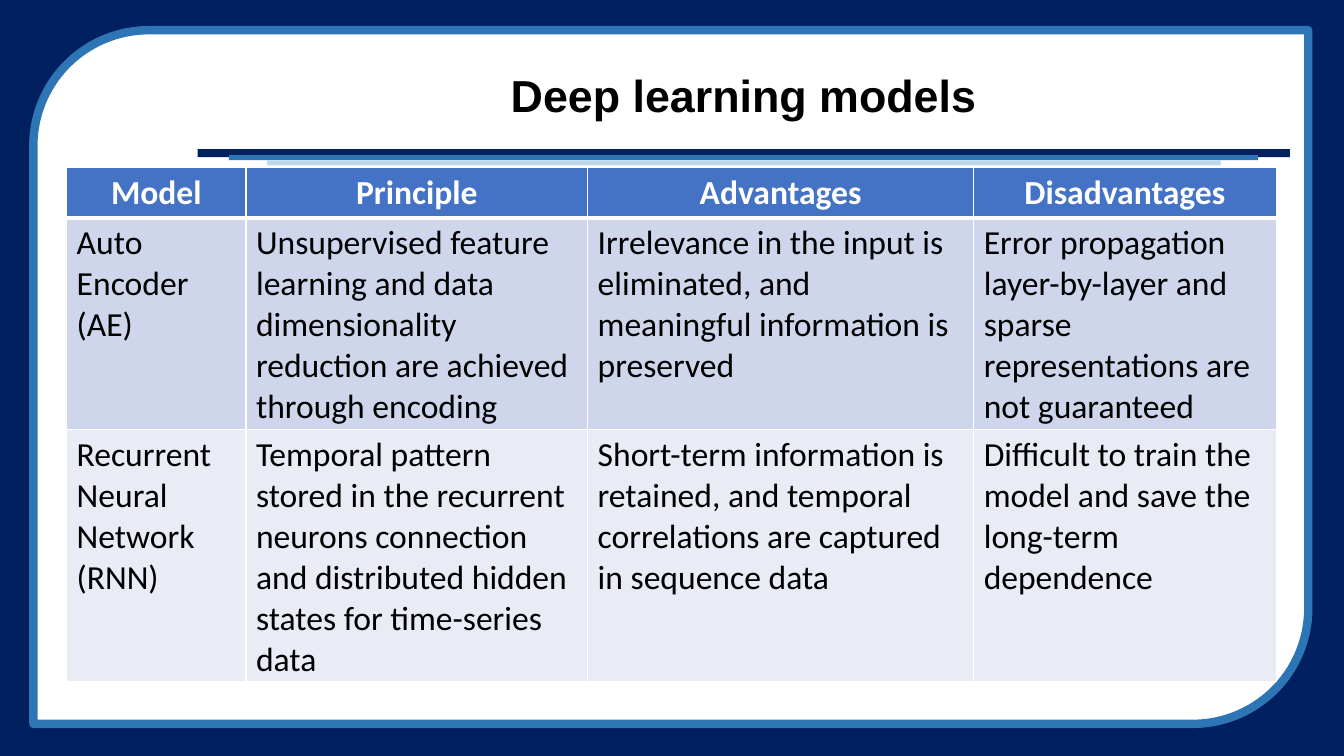
from lxml import etree
from pptx import Presentation
from pptx import util as u
from pptx.dml.color import RGBColor
from pptx.enum import shapes, text
from pptx.oxml.ns import qn

HUES = {
    "navy": "002060", "blue": "2E75B6", "pale": "BDD7EE",
    "head": "4472C4", "odd": "CFD5EA", "even": "E9EBF5",
    "white": "FFFFFF", "black": "000000",
}
BARS = [
    (4.98, 3.76, 27.53, 0.2, "navy"),
    (5.77, 3.91, 25.93, 0.13, "blue"),
    (6.73, 4.04, 24.03, 0.13, "pale"),
]
COLS = [4.52, 8.61, 9.73, 7.62]
ROWS = [1.22, 5.13, 6.1]
FILLS = ["head", "odd", "even"]
MODELS = [
    ["Model", "Principle", "Advantages", "Disadvantages"],
    ["Auto Encoder (AE)",
     "Unsupervised feature learning and data dimensionality reduction "
     "are achieved through encoding",
     "Irrelevance in the input is eliminated, and meaningful information "
     "is preserved",
     "Error propagation layer-by-layer and sparse representations are "
     "not guaranteed"],
    ["Recurrent Neural Network (RNN)",
     "Temporal pattern stored in the recurrent neurons connection and "
     "distributed hidden states for time-series data",
     "Short-term information is retained, and temporal correlations are "
     "captured in sequence data",
     "Difficult to train the model and save the long-term dependence"],
]


def hue(name):
    return RGBColor.from_string(HUES[name])


def paint(item, name):
    item.fill.solid()
    item.fill.fore_color.rgb = hue(name)


def block(slide, left, top, width, height, fill,
          kind=shapes.MSO_SHAPE.RECTANGLE):
    """Add a filled shape without outline; lengths are in centimetres."""
    box = slide.shapes.add_shape(
        kind, u.Cm(left), u.Cm(top), u.Cm(width), u.Cm(height))
    box.shadow.inherit = False
    paint(box, fill)
    box.line.fill.background()
    return box


def frame(slide):
    panel = block(slide, 0.84, 0.76, 32.13, 17.48, "white",
                  shapes.MSO_SHAPE.ROUND_2_DIAG_RECTANGLE)
    panel.rotation = 180
    panel.line.color.rgb = hue("blue")
    panel.line.width = u.Pt(6)


def write(para, words, size, font, color, bold):
    run = para.add_run()
    run.text = words
    run.font.size = u.Pt(size)
    run.font.name = font
    run.font.bold = bold
    run.font.color.rgb = hue(color)


def title(slide, words):
    box = slide.shapes.add_textbox(
        u.Cm(4.98), u.Cm(1.24), u.Cm(27.53), u.Cm(2.46))
    body = box.text_frame
    body.word_wrap = True
    body.vertical_anchor = text.MSO_ANCHOR.MIDDLE
    para = body.paragraphs[0]
    para.alignment = text.PP_ALIGN.CENTER
    para.line_spacing = 0.9
    write(para, words, 32, "Arial", "black", True)


def edge(cell, row):
    """Give a cell white borders, thick between the header and the body."""
    props = cell._tc.get_or_add_tcPr()
    thick = {(0, "B"), (1, "T")}
    for side in "LRTB":
        width = 3 if (row, side) in thick else 1
        line = etree.SubElement(props, qn(f"a:ln{side}"), w=str(u.Pt(width)))
        solid = etree.SubElement(line, qn("a:solidFill"))
        etree.SubElement(solid, qn("a:srgbClr"), val=HUES["white"])


def grid(slide):
    table = slide.shapes.add_table(
        len(ROWS), len(COLS), u.Cm(1.68), u.Cm(4.22),
        u.Cm(sum(COLS)), u.Cm(sum(ROWS))).table
    for col, width in zip(table.columns, COLS):
        col.width = u.Cm(width)
    for r, height in enumerate(ROWS):
        table.rows[r].height = u.Cm(height)
        top = r == 0
        for c, words in enumerate(MODELS[r]):
            cell = table.cell(r, c)
            edge(cell, r)
            paint(cell, FILLS[r])
            para = cell.text_frame.paragraphs[0]
            para.alignment = (text.PP_ALIGN.CENTER if top
                              else text.PP_ALIGN.LEFT)
            write(para, words, 24, "Calibri",
                  "white" if top else "black", top)


def main():
    deck = Presentation()
    deck.slide_width, deck.slide_height = u.Cm(33.87), u.Cm(19.05)
    slide = deck.slides.add_slide(deck.slide_layouts[6])
    block(slide, 0, 0, 33.87, 19.05, "navy")
    frame(slide)
    for bar in BARS:
        block(slide, *bar)
    title(slide, "Deep learning models")
    grid(slide)
    deck.save("out.pptx")


if __name__ == "__main__":
    main()
